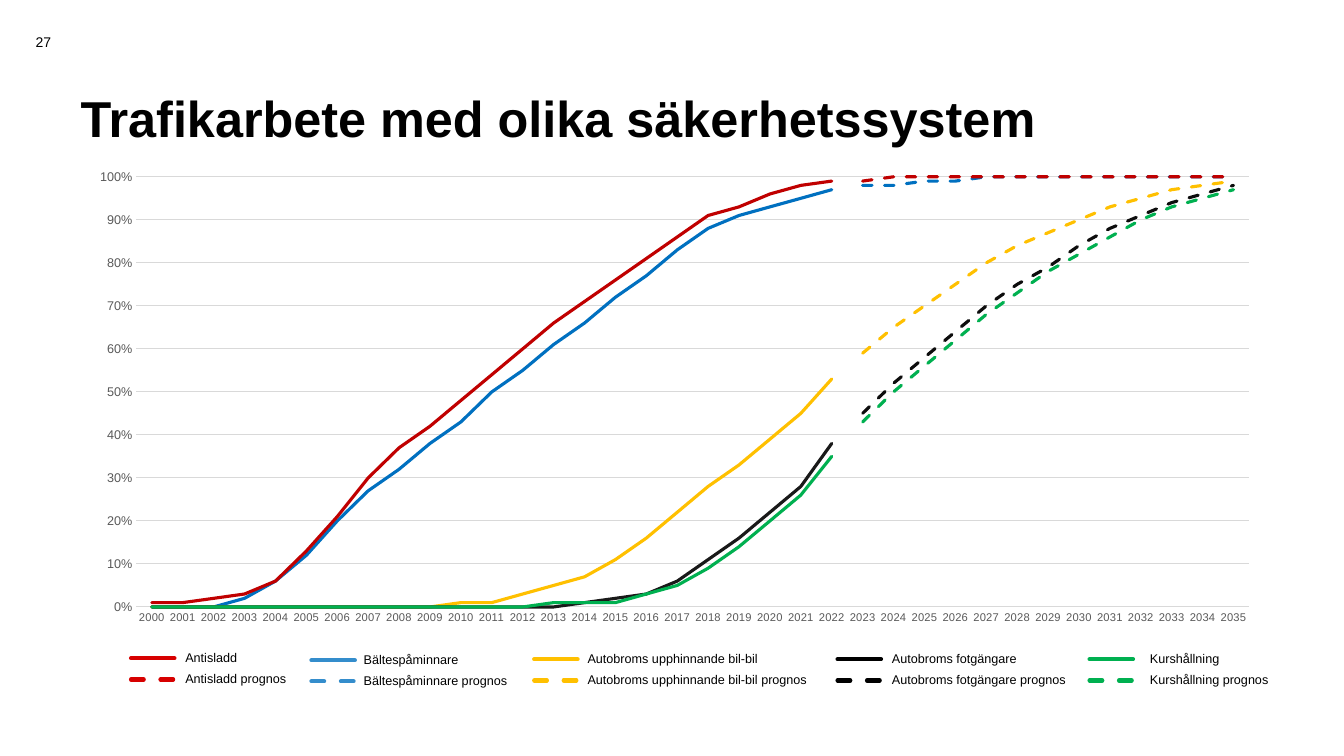
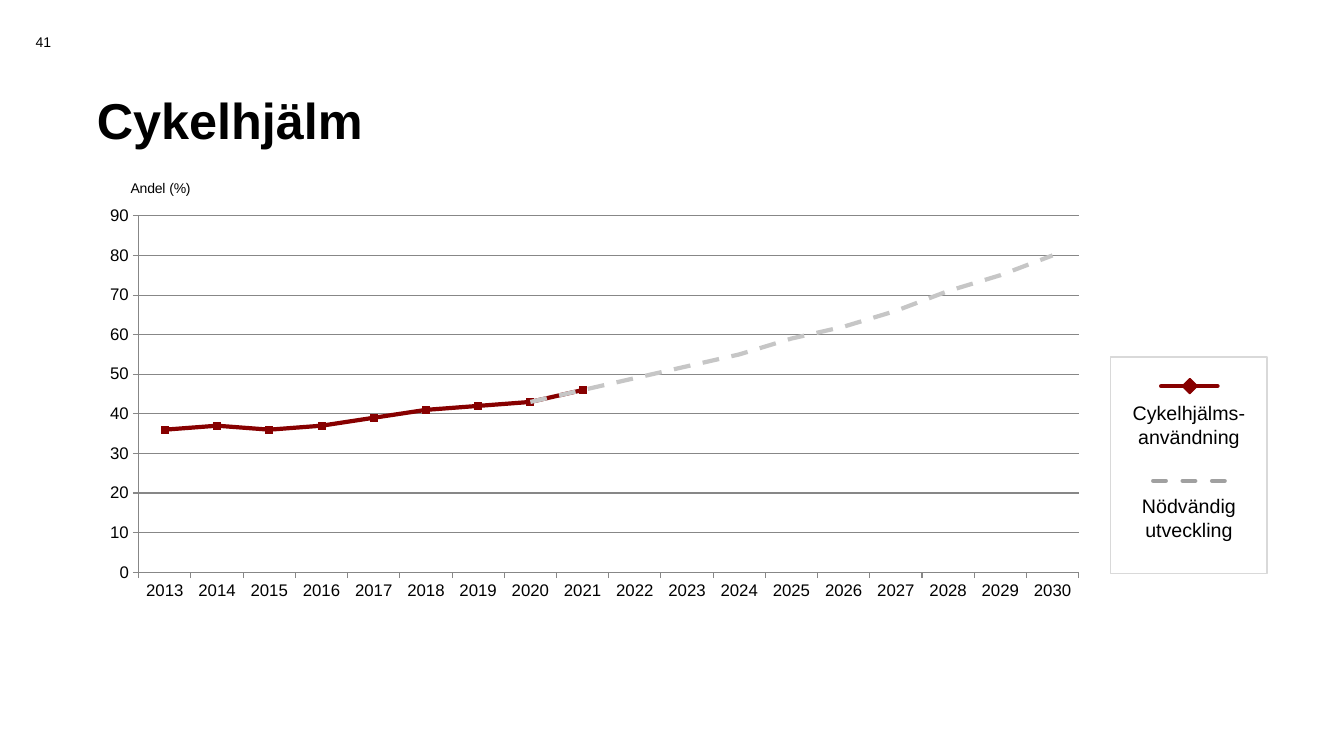
from lxml.etree import SubElement
from pptx import Presentation
from pptx.chart.data import CategoryChartData
from pptx.dml.color import RGBColor
from pptx.enum.chart import XL_CHART_TYPE, XL_MARKER_STYLE, XL_TICK_MARK
from pptx.enum.dml import MSO_LINE
from pptx.enum.shapes import MSO_CONNECTOR, MSO_SHAPE
from pptx.enum.text import MSO_ANCHOR, MSO_AUTO_SIZE, PP_ALIGN
from pptx.oxml import parse_xml
from pptx.oxml.ns import nsdecls, qn
from pptx.util import Pt

FACE = "Arial"
BLACK, WHITE, DARK, PALE = "000000", "FFFFFF", "595959", "D9D9D9"
AXIS, MAROON, SILVER, GREY = "878787", "870000", "C6C6C6", "A0A0A0"
BLUE, RED, GOLD, INK, COAL, GREEN = (
    "0070C0", "C00000", "FFC000", "0D0D0D", "191919", "00B050")

SYSTEMS = [
    ("Bältespåminnare", BLUE, BLUE,
     [0, 0, 0, .02, .06, .12, .2, .27, .32, .38, .43, .5, .55, .61, .66, .72,
      .77, .83, .88, .91, .93, .95, .97],
     [.98, .98, .99, .99, 1, 1, 1, 1, 1, 1, 1, 1, 1]),
    ("Antisladd", RED, RED,
     [.01, .01, .02, .03, .06, .13, .21, .3, .37, .42, .48, .54, .6, .66, .71,
      .76, .81, .86, .91, .93, .96, .98, .99],
     [.99, 1, 1, 1, 1, 1, 1, 1, 1, 1, 1, 1, 1]),
    ("Autobroms upphinnande bil-bil", GOLD, GOLD,
     [0] * 10 + [.01, .01, .03, .05, .07, .11, .16, .22, .28, .33, .39, .45, .53],
     [.59, .65, .7, .75, .8, .84, .87, .9, .93, .95, .97, .98, .99]),
    ("Autobroms fotgängare", COAL, INK,
     [0] * 14 + [.01, .02, .03, .06, .11, .16, .22, .28, .38],
     [.45, .52, .58, .64, .7, .75, .79, .84, .88, .91, .94, .96, .98]),
    ("Kurshållning", GREEN, GREEN,
     [0] * 13 + [.01, .01, .01, .03, .05, .09, .14, .2, .26, .35],
     [.43, .5, .56, .62, .68, .73, .78, .82, .86, .9, .93, .95, .97]),
]
KEYS = [
    ("Antisladd", "D70000", 93.6, 470.2, 31.7),
    ("Bältespåminnare", "348DCC", 222.5, 471.6, 30.2),
    ("Autobroms upphinnande bil-bil", GOLD, 381.6, 470.9, 31),
    ("Autobroms fotgängare", BLACK, 598.3, 470.9, 31.7),
    ("Kurshållning", GREEN, 778.3, 470.9, 36),
]
HELMET = [36, 37, 36, 37, 39, 41, 42, 43, 46]
NEED = [43, 46, 49, 52, 55, 59, 62, 66, 71, 75, 80]


def rgb(code):
    """Turn a hex string into a colour."""
    return RGBColor.from_string(code)


def style(font, size, color=BLACK, bold=False):
    """Set face, size, colour and weight of a font."""
    font.name, font.size, font.bold = FACE, Pt(size), bold
    font.color.rgb = rgb(color)


def pen(line, color, width, dash=False):
    """Set colour, width and dash of a line."""
    line.color.rgb = rgb(color)
    line.width = Pt(width)
    if dash:
        line.dash_style = MSO_LINE.DASH


def write(para, text, size, bold=False):
    """Add one styled run to a paragraph."""
    run = para.add_run()
    run.text = text
    style(run.font, size, BLACK, bold)


def label(shapes, box, anchor=MSO_ANCHOR.TOP):
    """Add an empty wrapping text box and return its frame."""
    frame = shapes.add_textbox(*map(Pt, box)).text_frame
    frame.word_wrap = True
    frame.vertical_anchor = anchor
    return frame


def stroke(shapes, x, y, width, color, dash=False):
    """Draw a level round-ended line without shadow."""
    link = shapes.add_connector(
        MSO_CONNECTOR.STRAIGHT, Pt(x), Pt(y), Pt(x + width), Pt(y))
    pen(link.line, color, 3, dash)
    props = link.element.spPr
    props.find(qn("a:ln")).set("cap", "rnd")
    SubElement(props, qn("a:effectLst"))


def solid(shapes, kind, box, fill, edge):
    """Draw a filled shape with a thin outline."""
    shape = shapes.add_shape(kind, *map(Pt, box))
    shape.shadow.inherit = False
    shape.fill.solid()
    shape.fill.fore_color.rgb = rgb(fill)
    pen(shape.line, edge, 1)


def start(deck, title, number, box):
    """Add a slide with its title and page number."""
    slide = deck.slides.add_slide(deck.slide_layouts[5])
    head = slide.shapes.title
    head.left, head.top, head.width, head.height = map(Pt, box)
    frame = head.text_frame
    frame.auto_size = MSO_AUTO_SIZE.NONE
    frame.vertical_anchor = MSO_ANCHOR.MIDDLE
    para = frame.paragraphs[0]
    para.alignment, para.line_spacing = PP_ALIGN.LEFT, 0.9
    write(para, title, 36, True)
    page = label(slide.shapes, (0, 15.8, 62, 28.8), MSO_ANCHOR.MIDDLE)
    page.paragraphs[0].alignment = PP_ALIGN.CENTER
    write(page.paragraphs[0], number, 10)
    return slide.shapes


def place(node, inner=False, **parts):
    """Give a chart part a manual layout."""
    spot = node.find(qn("c:layout"))
    if spot is None:
        spot = parse_xml(f"<c:layout {nsdecls('c')}/>")
        node.insert(0, spot)
    for child in list(spot):
        spot.remove(child)
    plan = SubElement(spot, qn("c:manualLayout"))
    if inner:
        SubElement(plan, qn("c:layoutTarget")).set("val", "inner")
    for side in "xy":
        SubElement(plan, qn(f"c:{side}Mode")).set("val", "edge")
    for name, value in parts.items():
        SubElement(plan, qn(f"c:{name}")).set("val", str(value))


def graph(shapes, box, kind, first, rows, width, area):
    """Add a line chart of (name, colour, dash, values) rows."""
    data = CategoryChartData()
    data.categories = [str(first + i) for i in range(len(rows[0][3]))]
    for name, _, _, values in rows:
        data.add_series(name, values)
    chart = shapes.add_chart(kind, *map(Pt, box), data).chart
    chart.has_legend = chart.has_title = False
    style(chart.font, 10)
    plot = chart.plots[0]
    plot.vary_by_categories = False
    for line, (_, color, dash, _) in zip(plot.series, rows):
        line.smooth = False
        line.marker.style = XL_MARKER_STYLE.NONE
        pen(line.format.line, color, width, dash)
    place(chart.element.find(".//" + qn("c:plotArea")), True,
          **dict(zip("xywh", area)))
    return chart


def scale(chart, top, step, form, sizes, color, edge, tick):
    """Format both axes and the grid."""
    cat, val = chart.category_axis, chart.value_axis
    for axis, size in zip((cat, val), sizes):
        style(axis.tick_labels.font, size, color)
        axis.major_tick_mark = tick
        axis.minor_tick_mark = XL_TICK_MARK.NONE
        pen(axis.format.line, edge, 0.75)
    val.minimum_scale, val.maximum_scale, val.major_unit = 0, top, step
    val.tick_labels.number_format = form
    val.tick_labels.number_format_is_linked = False
    val.has_major_gridlines = True
    pen(val.major_gridlines.format.line, edge, 0.75)


def key(shapes, text, color, x, y, gap):
    """Draw a solid and a dashed legend entry from x and y."""
    group = shapes.add_group_shape().shapes
    for row, (tail, width) in enumerate((("", 31), (" prognos", 36.2))):
        level = y + 15.1 * row
        stroke(group, x, level, width, color, row == 1)
        name = text + tail
        frame = label(group, (x + gap, level - 9.4, 4.5 * len(name) + 20, 18))
        write(frame.paragraphs[0], name, 9)


def traffic(deck):
    """Build the slide on safety systems."""
    shapes = start(deck, "Trafikarbete med olika säkerhetssystem", "27",
                   (50.4, 68.4, 850.3, 36.7))
    rows = []
    for name, color, shade, past, ahead in SYSTEMS:
        rows.append((name + " prognos", shade, True, [None] * len(past) + ahead))
        rows.append((name, color, False, past + [None] * len(ahead)))
    chart = graph(shapes, (54.7, 114.5, 854.6, 337.7), XL_CHART_TYPE.LINE,
                  2000, rows, 2.25, (0.05, 0.035, 0.93, 0.91))
    scale(chart, 1, 0.1, "0%", (8, 9), DARK, PALE, XL_TICK_MARK.NONE)
    chart.value_axis.format.line.fill.background()
    for series in chart.element.iter(qn("c:ser")):
        for line in series.iter(qn("a:ln")):
            line.set("cap", "rnd")
    for entry in KEYS:
        key(shapes, *entry)


def legend(shapes, x, y, w, h):
    """Draw the boxed helmet legend."""
    group = shapes.add_group_shape().shapes
    solid(group, MSO_SHAPE.RECTANGLE, (x, y, w, h), WHITE, PALE)
    frame = label(group, (x + 5.8, y + 28, w - 11.5, 108.7))
    for i, lines in enumerate((["Cykelhjälms-användning"],
                               ["Nödvändig", "utveckling"])):
        para = frame.add_paragraph() if i else frame.paragraphs[0]
        para.alignment, para.space_before = PP_ALIGN.CENTER, Pt(33)
        for j, line in enumerate(lines):
            if j:
                para.add_line_break()
            write(para, line, 14)
    stroke(group, x + 30.3, y + 88.6, 51.1, GREY, True)
    stroke(group, x + 36, y + 20.9, 40.3, MAROON)
    solid(group, MSO_SHAPE.DIAMOND, (x + 51.1, y + 15.5, 10.8, 10.8),
          MAROON, MAROON)


def helmet(deck):
    """Build the slide on cycle helmets."""
    shapes = start(deck, "Cykelhjälm", "41", (61.9, 68.4, 850.3, 39.6))
    rows = [("Cykelhjälmsanvändning", MAROON, False, HELMET + [None] * 9),
            ("Nödvändig utveckling", SILVER, True, [None] * 7 + NEED)]
    chart = graph(shapes, (22.3, 118.1, 768.2, 414.7),
                  XL_CHART_TYPE.LINE_MARKERS, 2013, rows, 3,
                  (0.1, 0.087, 0.874, 0.614))
    scale(chart, 90, 10, "0", (12, 12), BLACK, AXIS, XL_TICK_MARK.OUTSIDE)
    mark = chart.plots[0].series[0].marker
    mark.style, mark.size = XL_MARKER_STYLE.SQUARE, 5
    mark.format.fill.solid()
    mark.format.fill.fore_color.rgb = rgb(MAROON)
    pen(mark.format.line, MAROON, 0.75)
    title = chart.value_axis.axis_title
    write(title.text_frame.paragraphs[0], "Andel (%)", 10)
    body = title.element.find(".//" + qn("a:bodyPr"))
    body.set("rot", "0")
    body.set("vert", "horz")
    place(title.element, x=0.09, y=0.02)
    legend(shapes, 793.4, 254.9, 111.6, 154.8)


def main():
    """Build and save the deck."""
    deck = Presentation()
    deck.slide_width, deck.slide_height = Pt(960), Pt(540)
    traffic(deck)
    helmet(deck)
    deck.save("out.pptx")


if __name__ == "__main__":
    main()
